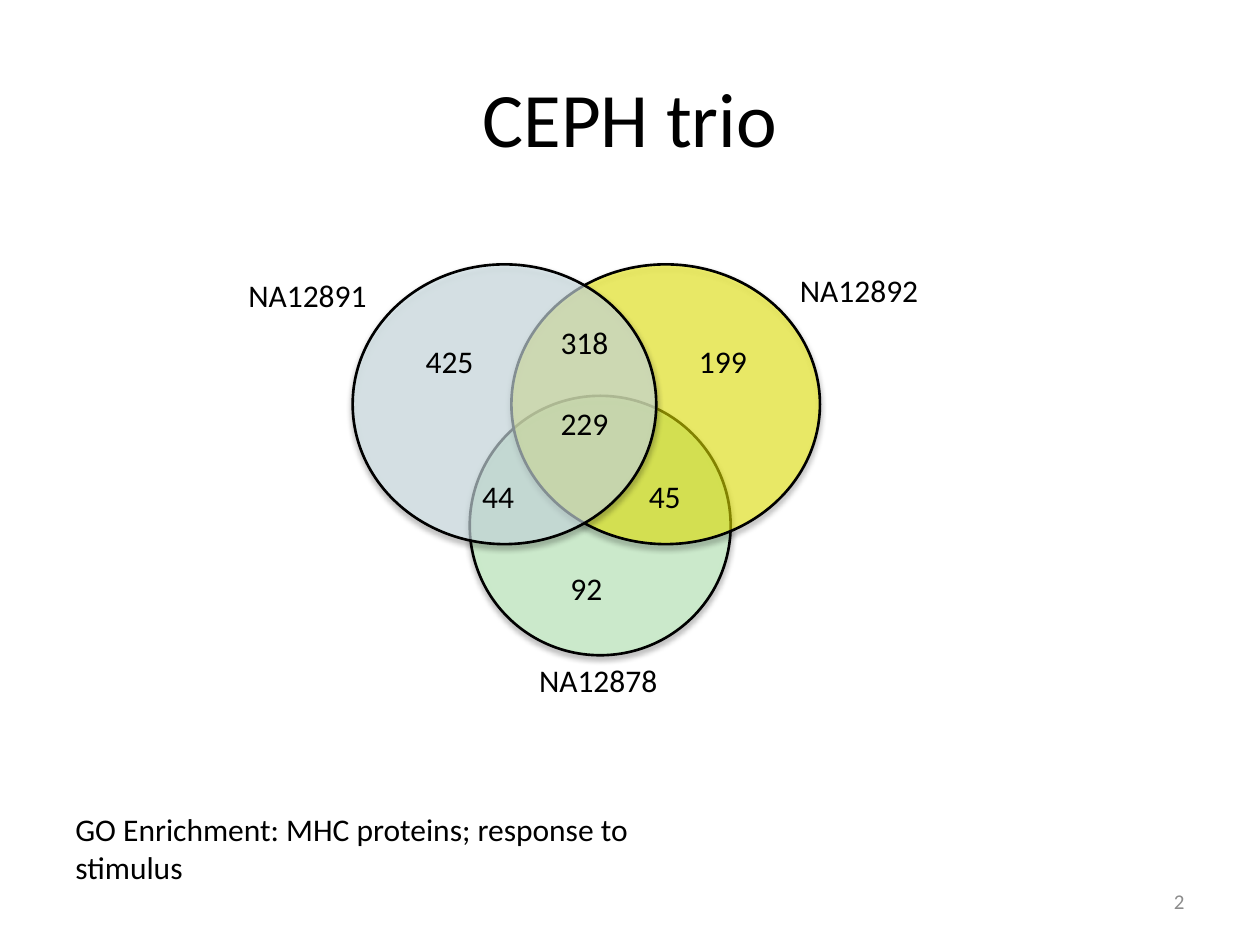
"""Builds the CEPH trio slide with its three-set Venn diagram."""
from dataclasses import dataclass

import pptx
import pptx.dml.color
import pptx.enum.shapes
import pptx.enum.text
import pptx.oxml
import pptx.oxml.ns
import pptx.util
from lxml import etree

Cm = pptx.util.Cm
PP_ALIGN = pptx.enum.text.PP_ALIGN
ANCHOR = pptx.enum.text.MSO_ANCHOR
qn = pptx.oxml.ns.qn


@dataclass(frozen=True)
class Theme:
    font: str = "Calibri"
    ink: str = "000000"
    muted: str = "8C8C8C"
    child: str = "CCFFCC"
    mother: str = "FFFF00"
    father: str = "DBEEF4"
    title_size: int = 44
    body_size: int = 18
    number_size: int = 12


theme = Theme()


def format_text(frame, size, color, align):
    for paragraph in frame.paragraphs:
        paragraph.alignment = align
        for run in paragraph.runs:
            run.font.name = theme.font
            run.font.size = pptx.util.Pt(size)
            run.font.color.rgb = pptx.dml.color.RGBColor.from_string(color)


def add_text(text, left, top, width, height, align=PP_ALIGN.LEFT,
             size=theme.body_size, color=theme.ink):
    box = slide.shapes.add_textbox(Cm(left), Cm(top), Cm(width), Cm(height))
    frame = box.text_frame
    frame.word_wrap = True
    frame.auto_size = pptx.enum.text.MSO_AUTO_SIZE.SHAPE_TO_FIT_TEXT
    frame.text = text
    format_text(frame, size, color, align)
    return frame


deck = pptx.Presentation()
deck.slide_width, deck.slide_height = Cm(25.4), Cm(19.05)
deck.element.set("firstSlideNum", "2")
slide = deck.slides.add_slide(deck.slide_layouts[5])

title = slide.shapes.title
title.left, title.top, title.width, title.height = Cm(1.27), Cm(0.76), Cm(22.86), Cm(3.18)
title.text_frame.text = "CEPH trio"
title.text_frame.vertical_anchor = ANCHOR.MIDDLE
format_text(title.text_frame, theme.title_size, theme.ink, PP_ALIGN.CENTER)

venn_sets = [
    (theme.child, 60, 9.47, 7.98, 5.26, 5.23),
    (theme.mother, 51, 10.31, 5.33, 6.22, 5.64),
    (theme.father, 60, 7.11, 5.33, 6.12, 5.64),
]
for color, opacity, left, top, width, height in venn_sets:
    venn_set = slide.shapes.add_shape(
        pptx.enum.shapes.MSO_SHAPE.OVAL, Cm(left), Cm(top), Cm(width), Cm(height))
    venn_set.fill.solid()
    venn_set.fill.fore_color.rgb = pptx.dml.color.RGBColor.from_string(color)
    fill_color = venn_set.element.spPr.find(qn("a:solidFill")).find(qn("a:srgbClr"))
    etree.SubElement(fill_color, qn("a:alpha"), val=str(opacity * 1000))
    venn_set.line.color.rgb = pptx.dml.color.RGBColor.from_string(theme.ink)
    venn_set.line.width = pptx.util.Pt(1.5)
    venn_set.shadow.inherit = False
    drop_shadow = etree.SubElement(
        venn_set.element.spPr.find(qn("a:effectLst")), qn("a:outerShdw"),
        blurRad="40000", dist="23000", dir="5400000", rotWithShape="0")
    shadow_color = etree.SubElement(drop_shadow, qn("a:srgbClr"), val=theme.ink)
    etree.SubElement(shadow_color, qn("a:alpha"), val="35000")

sample_names = [("NA12891", 3.61, 5.44), ("NA12892", 14.73, 5.33), ("NA12878", 9.47, 13.21)]
for sample, left, top in sample_names:
    add_text(sample, left, top, 5.18, 1.02, PP_ALIGN.CENTER)

region_counts = [
    ("229", 11.05, 8.03), ("44", 9.47, 9.5), ("45", 12.83, 9.5), ("318", 11.05, 6.38),
    ("425", 8.33, 6.78), ("199", 13.84, 6.78), ("92", 11.25, 11.35),
]
for count, left, top in region_counts:
    add_text(count, left, top, 1.78, 1.02)

add_text("GO Enrichment: MHC proteins; response to stimulus", 1.27, 16.21, 12.57, 1.8)

page_number = add_text("2", 18.21, 17.65, 5.92, 1.02, PP_ALIGN.RIGHT,
                       theme.number_size, theme.muted)
page_number.auto_size = pptx.enum.text.MSO_AUTO_SIZE.NONE
page_number.vertical_anchor = ANCHOR.MIDDLE
number_run = page_number.paragraphs[0].runs[0]._r
number_field = etree.Element(
    qn("a:fld"), id="{B6F15528-21DE-4FAA-801E-634DDDAF4B2B}", type="slidenum")
number_run.addprevious(number_field)
number_field.extend(list(number_run))
number_run.getparent().remove(number_run)

deck.save("out.pptx")
